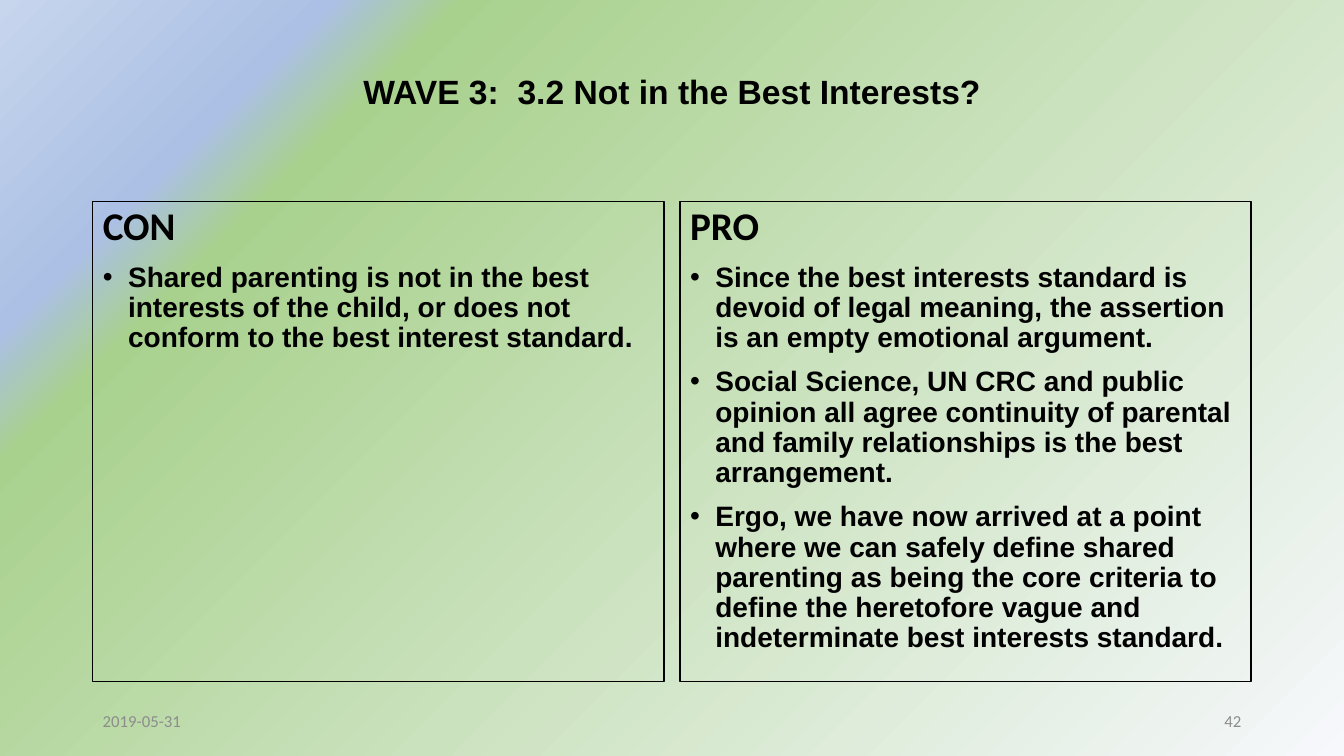
from dataclasses import dataclass

from pptx import Presentation
from pptx.dml.color import RGBColor
from pptx.enum.text import MSO_ANCHOR as Anchor, MSO_AUTO_SIZE as AutoSize, PP_ALIGN as Align
from pptx.oxml import parse_xml
from pptx.oxml.ns import nsdecls
from pptx.util import Inches, Pt

TITLE = "WAVE 3:  3.2 Not in the Best Interests?\v"
COLUMNS = [
    ("CON", [
        "Shared parenting is not in the best interests of the child, or does not "
        "conform to the best interest standard.",
    ]),
    ("PRO", [
        "Since the best interests standard is devoid of legal meaning, the assertion "
        "is an empty emotional argument.",
        "Social Science, UN CRC and public opinion all agree continuity of parental "
        "and family relationships is the best arrangement.",
        "Ergo, we have now arrived at a point where we can safely define shared "
        "parenting as being the core criteria to define the heretofore vague and "
        "indeterminate best interests standard.",
    ]),
]
FOOTER = [("2019-05-31", Align.LEFT), ("42", Align.RIGHT)]


@dataclass(frozen=True)
class Theme:
    ink: str = "000000"
    muted: str = "8C8C8C"
    backdrop: tuple = ((0, "F6F8FC"), (78, "A9D18E"), (84, "ABC0E4"), (100, "C7D5ED"))
    text_face: str = "Arial"
    heading_face: str = "Calibri"
    title_size: int = 24
    heading_size: int = 28
    point_size: int = 20
    footer_size: int = 12


THEME = Theme()
WIDTH, HEIGHT = 13.33, 7.5
MARGIN = 0.92
CONTENT = WIDTH - 2 * MARGIN
GUTTER = 0.16
COLUMN = (CONTENT - GUTTER) / 2
FOOTER_WIDTH = 3
INDENT = 0.25


def place(shape, left, top, width, height):
    shape.left, shape.top = Inches(left), Inches(top)
    shape.width, shape.height = Inches(width), Inches(height)


def style(para, face, size, color, bold=True):
    for font in (para.font, *(span.font for span in para.runs)):
        font.name, font.size, font.bold = face, Pt(size), bold
        font.color.rgb = RGBColor.from_string(color)


def set_bullet(para, char=None):
    props = para._p.get_or_add_pPr()
    indent = Inches(INDENT) if char else 0
    props.set("marL", str(indent))
    props.set("indent", str(-indent))
    mark = f'<a:buChar {nsdecls("a")} char="{char}"/>' if char else f'<a:buNone {nsdecls("a")}/>'
    props.insert_element_before(parse_xml(mark), "a:tabLst", "a:defRPr", "a:extLst")


def paint_background(page):
    page.background.fill.solid()
    stops = "".join(
        f'<a:gs pos="{share * 1000}"><a:srgbClr val="{color}"/></a:gs>'
        for share, color in THEME.backdrop
    )
    gradient = parse_xml(
        f'<a:gradFill {nsdecls("a")} rotWithShape="1"><a:gsLst>{stops}</a:gsLst>'
        '<a:path path="circle"><a:fillToRect l="100000" t="100000"/></a:path></a:gradFill>'
    )
    solid = page._element.find(".//" + "{http://schemas.openxmlformats.org/drawingml/2006/main}solidFill")
    solid.getparent().replace(solid, gradient)


def add_title(page):
    title = page.shapes.title
    place(title, MARGIN, 0.4, CONTENT, 1.45)
    frame = title.text_frame
    frame.text = TITLE.replace("\v", "")
    frame.auto_size, frame.vertical_anchor = AutoSize.NONE, Anchor.MIDDLE
    para = frame.paragraphs[0]
    para.add_line_break()
    para.alignment, para.line_spacing = Align.CENTER, 0.9
    style(para, THEME.text_face, THEME.title_size, THEME.ink)


def fill_column(box, number, heading, points):
    place(box, MARGIN + number * (COLUMN + GUTTER), 2, COLUMN, 4.76)
    box.line.color.rgb = RGBColor.from_string(THEME.ink)
    box.line.width = Pt(1)
    frame = box.text_frame
    frame.text = "\n".join([heading, *points])
    frame.auto_size, frame.vertical_anchor = AutoSize.NONE, Anchor.TOP
    for row, para in enumerate(frame.paragraphs):
        para.line_spacing, para.space_before = 0.9, Pt(10)
        if row:
            style(para, THEME.text_face, THEME.point_size, THEME.ink)
        else:
            style(para, THEME.heading_face, THEME.heading_size, THEME.ink)
        set_bullet(para, "•" if row else None)


def add_footer(page, text, align):
    left = MARGIN if align == Align.LEFT else WIDTH - MARGIN - FOOTER_WIDTH
    box = page.shapes.add_textbox(*map(Inches, (left, 6.95, FOOTER_WIDTH, 0.4)))
    frame = box.text_frame
    frame.text, frame.word_wrap, frame.vertical_anchor = text, True, Anchor.MIDDLE
    para = frame.paragraphs[0]
    para.alignment = align
    style(para, THEME.heading_face, THEME.footer_size, THEME.muted, bold=False)


def main():
    deck = Presentation()
    deck.slide_width, deck.slide_height = Inches(WIDTH), Inches(HEIGHT)
    page = deck.slides.add_slide(deck.slide_layouts.get_by_name("Two Content"))
    paint_background(page)
    add_title(page)
    for number, (heading, points) in enumerate(COLUMNS):
        fill_column(page.placeholders[number + 1], number, heading, points)
    for text, align in FOOTER:
        add_footer(page, text, align)
    deck.save("out.pptx")


if __name__ == "__main__":
    main()
